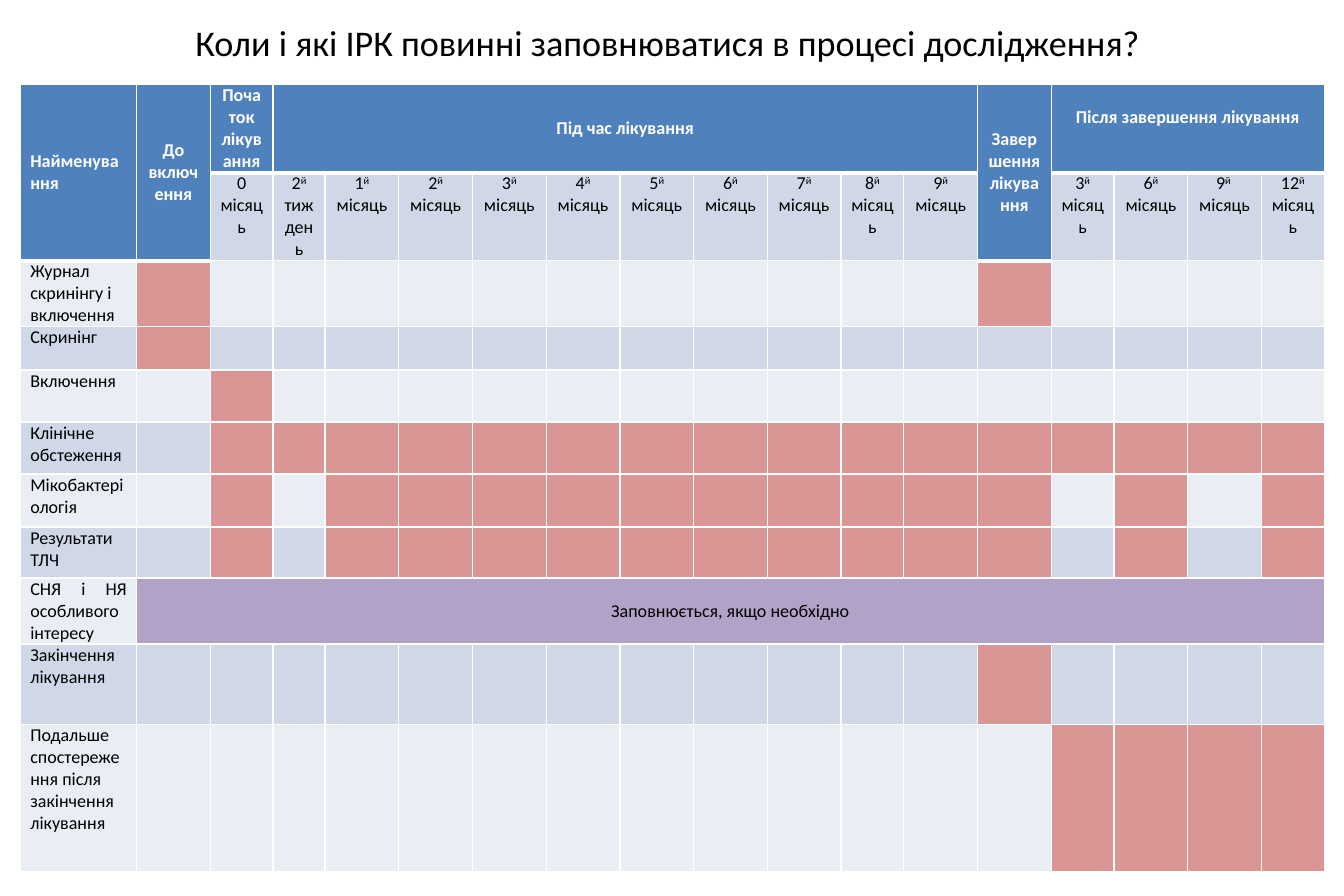
from dataclasses import dataclass

from lxml.etree import SubElement
from pptx import Presentation
from pptx.dml.color import RGBColor
from pptx.enum.text import MSO_ANCHOR, MSO_AUTO_SIZE, PP_ALIGN
from pptx.oxml.ns import qn
from pptx.table import Table, _Cell
from pptx.text.text import TextFrame
from pptx.util import Pt

PX = 9144  # EMU in one px, 100 px to the inch
LEFT, CENTER, JUST = PP_ALIGN.LEFT, PP_ALIGN.CENTER, PP_ALIGN.JUSTIFY
TOP, MIDDLE = MSO_ANCHOR.TOP, MSO_ANCHOR.MIDDLE


@dataclass(frozen=True)
class Theme:
    font: str = "Calibri"
    title: int = 24
    body: int = 12
    black: str = "000000"
    white: str = "FFFFFF"
    head: str = "4F81BD"
    dark: str = "D0D8E8"
    light: str = "E9EDF4"
    mark: str = "D99694"
    note: str = "B3A2C7"
    thin: int = 1
    thick: int = 3


@dataclass(frozen=True)
class Head:
    text: str
    col: int
    rows: int = 1
    cols: int = 1
    align: PP_ALIGN = CENTER
    anchor: MSO_ANCHOR = MIDDLE
    pad: int = 0


@dataclass(frozen=True)
class Form:
    name: str
    marks: str = ""  # one sign a column, "#" for a form to fill in
    align: PP_ALIGN = JUST
    note: str = ""


THEME = Theme()
WIDTHS = [107, 68, 58, 48, *[68] * 7, 58, 68, 68, 58, 68, 68, 58]
HEIGHTS = [79, 79, 59, 40, 48, 48, 49, 47, 60, 74, 136]

HEADS = [
    Head("Найменування", 0, rows=2, align=LEFT),
    Head("До включення", 1, rows=2),
    Head("Початок лікування", 2),
    Head("Під час лікування", 3, cols=10),
    Head("Завершення лікування", 13, rows=2),
    Head("Після завершення лікування", 14, cols=4, anchor=TOP, pad=20),
]

# Column number to visit label; text between ^ signs is raised
VISITS = {
    2: "0\nмісяць",
    3: "2^й^\nтиждень",
    **{n + 3: f"{n}^й ^місяць" for n in range(1, 10)},
    10: "7^й^\nмісяць",
    11: "8^й^\nмісяць",
    14: "3^й ^місяць",
    15: "6^й ^місяць",
    16: "9^й ^\nмісяць",
    17: "12^й ^місяць",
}

FORMS = [
    Form("Журнал скринінгу і включення", "#...........#", LEFT),
    Form("Скринінг", "#"),
    Form("Включення", ".#"),
    Form("Клінічне обстеження", ".################"),
    Form("Мікобактеріологія", ".#.##########.#.#"),
    Form("Результати ТЛЧ", ".#.##########.#.#"),
    Form("СНЯ і НЯ особливого інтересу", note="Заповнюється, якщо необхідно"),
    Form("Закінчення лікування", "............#"),
    Form("Подальше спостереження після закінчення лікування",
         ".............####", LEFT),
]


def write(frame: TextFrame, text: str, *, size: int = THEME.body,
          color: str = THEME.black, bold: bool = False,
          align: PP_ALIGN = CENTER) -> None:
    for i, line in enumerate(text.split("\n")):
        para = frame.add_paragraph() if i else frame.paragraphs[0]
        para.alignment = align
        for j, part in enumerate(line.split("^")):
            if not part:
                continue
            run = para.add_run()
            run.text = part
            font = run.font
            font.name, font.size, font.bold = THEME.font, Pt(size), bold
            font.color.rgb = RGBColor.from_string(color)
            if j % 2:
                run._r.get_or_add_rPr().set("baseline", "30000")


def paint(cell: _Cell, color: str, base: int = THEME.thin) -> None:
    """Set borders, fill and margins; base is the width of the lower edge."""
    props = cell._tc.get_or_add_tcPr()
    for side in "LRTB":
        width = base if side == "B" else THEME.thin
        line = SubElement(props, qn(f"a:ln{side}"), w=str(Pt(width)))
        fill = SubElement(line, qn("a:solidFill"))
        SubElement(fill, qn("a:srgbClr"), val=THEME.white)
    cell.fill.solid()
    cell.fill.fore_color.rgb = RGBColor.from_string(color)
    cell.margin_left = cell.margin_right = 9 * PX
    cell.margin_top = cell.margin_bottom = 0


def draw_head(table: Table, head: Head) -> None:
    for row in range(head.rows):
        for col in range(head.col, head.col + head.cols):
            paint(table.cell(row, col), THEME.head, THEME.thick)
    cell = table.cell(0, head.col)
    if head.rows * head.cols > 1:
        cell.merge(table.cell(head.rows - 1, head.col + head.cols - 1))
    cell.vertical_anchor = head.anchor
    cell.margin_top = head.pad * PX
    write(cell.text_frame, head.text, color=THEME.white, bold=True,
          align=head.align)


def draw_form(table: Table, row: int, form: Form) -> None:
    band = THEME.dark if row % 2 else THEME.light
    last = len(WIDTHS) - 1
    name = table.cell(row, 0)
    paint(name, band)
    write(name.text_frame, form.name, align=form.align)
    for col, sign in enumerate(form.marks.ljust(last, "."), 1):
        color = THEME.mark if sign == "#" else band
        paint(table.cell(row, col), THEME.note if form.note else color)
    if form.note:
        cell = table.cell(row, 1)
        cell.merge(table.cell(row, last))
        cell.vertical_anchor = MIDDLE
        write(cell.text_frame, form.note)


def main() -> None:
    deck = Presentation()
    deck.slide_width, deck.slide_height = 1240 * PX, 827 * PX
    slide = deck.slides.add_slide(deck.slide_layouts[5])

    # Title
    title = slide.shapes.title
    title.left, title.top = 58 * PX, 26 * PX
    title.width, title.height = 1116 * PX, 26 * PX
    frame = title.text_frame
    frame.auto_size, frame.word_wrap = MSO_AUTO_SIZE.NONE, True
    frame.vertical_anchor = MIDDLE
    write(frame, "Коли і які ІРК повинні заповнюватися в процесі дослідження?",
          size=THEME.title)

    # Table grid
    table = slide.shapes.add_table(
        len(HEIGHTS), len(WIDTHS), 19 * PX, 78 * PX,
        sum(WIDTHS) * PX, sum(HEIGHTS) * PX).table
    table.first_row = table.horz_banding = False
    for column, width in zip(table.columns, WIDTHS):
        column.width = width * PX
    for line, height in zip(table.rows, HEIGHTS):
        line.height = height * PX

    # Header rows
    for head in HEADS:
        draw_head(table, head)
    for col, label in VISITS.items():
        cell = table.cell(1, col)
        paint(cell, THEME.dark)
        write(cell.text_frame, label)

    # Form rows
    for row, form in enumerate(FORMS, 2):
        draw_form(table, row, form)

    deck.save("out.pptx")


if __name__ == "__main__":
    main()
